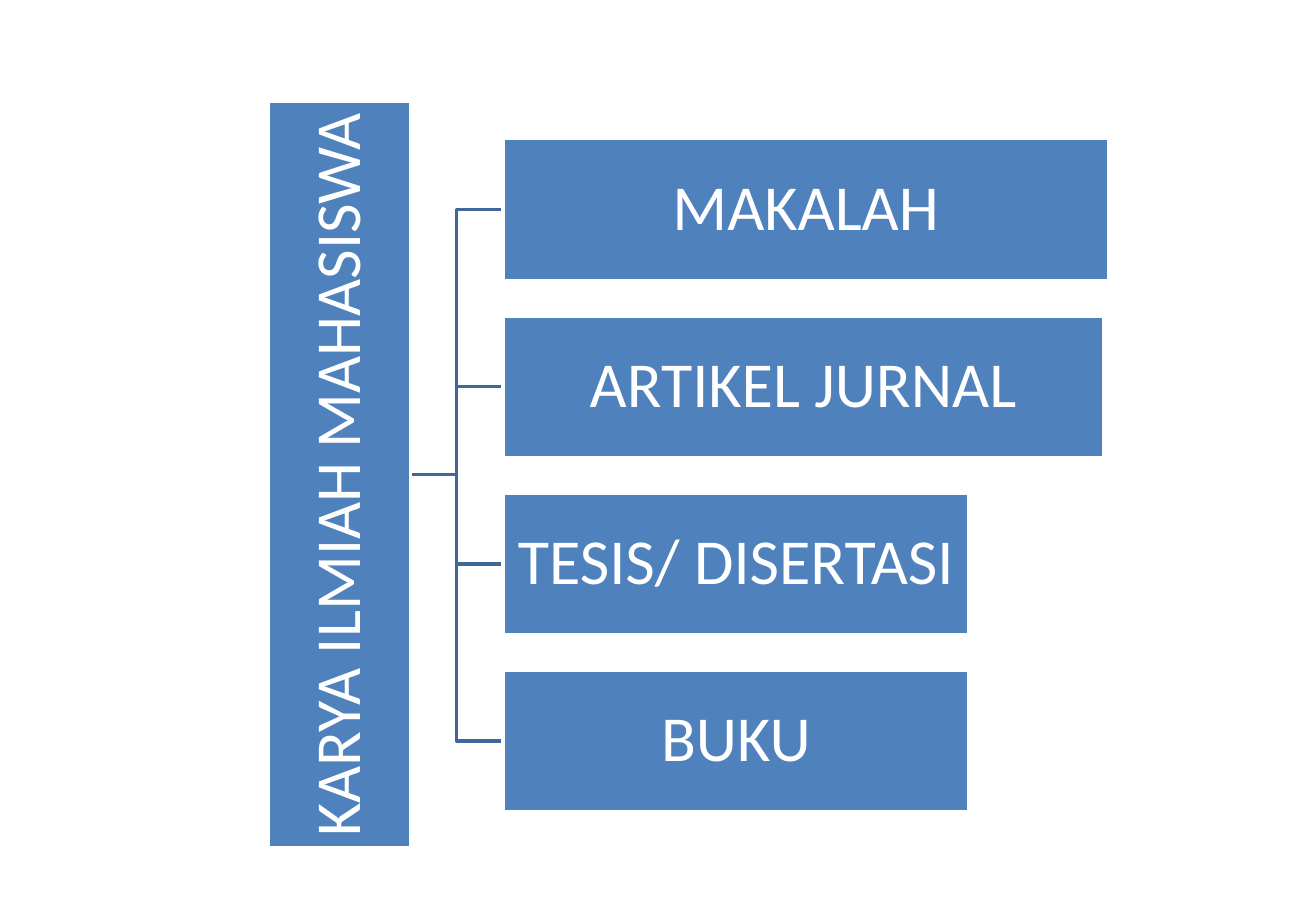
from dataclasses import dataclass

from pptx import Presentation
from pptx.dml.color import RGBColor
from pptx.enum.shapes import MSO_SHAPE
from pptx.enum.text import MSO_ANCHOR, PP_ALIGN
from pptx.shapes.autoshape import Shape
from pptx.slide import Slide
from pptx.util import Emu, Pt

PX = 7620  # EMU per px, 120 px to the inch
COLORS = {"box": "4F81BD", "white": "FFFFFF", "line": "3F6797"}
FRAME_FORMAT = {
    "word_wrap": True,
    "vertical_anchor": MSO_ANCHOR.MIDDLE,
    "margin_left": Pt(2),
    "margin_right": Pt(2),
    "margin_top": Pt(2),
    "margin_bottom": Pt(2),
}
PARAGRAPH_FORMAT = {"alignment": PP_ALIGN.CENTER, "line_spacing": 0.9}
FONT_FORMAT = {"name": "Calibri", "size": Pt(38)}

# Layout in px
THICKNESS = 140
ROOT_LEFT, ROOT_TOP, ROOT_LENGTH = 265, 101, 737
BRANCH_LEFT, BRANCH_TOP, BRANCH_PITCH = 497, 137, 175


@dataclass(frozen=True)
class Box:
    text: str
    left: int
    top: int
    width: int
    height: int = THICKNESS
    rotation: int = 0

    @property
    def middle(self) -> int:
        return self.top + self.height // 2


def px(value: int) -> Emu:
    return Emu(value * PX)


def color(name: str) -> RGBColor:
    return RGBColor.from_string(COLORS[name])


def apply(target: object, values: dict) -> None:
    for name, value in values.items():
        setattr(target, name, value)


def set_outline(sp: Shape, name: str) -> None:
    sp.shadow.inherit = False
    sp.line.color.rgb = color(name)
    sp.line.width = Pt(2)


def draw_box(s: Slide, box: Box) -> None:
    sp = s.shapes.add_shape(
        MSO_SHAPE.RECTANGLE, px(box.left), px(box.top), px(box.width), px(box.height)
    )
    sp.rotation = box.rotation
    sp.fill.solid()
    sp.fill.fore_color.rgb = color("box")
    set_outline(sp, "white")
    tf = sp.text_frame
    apply(tf, FRAME_FORMAT)
    p = tf.paragraphs[0]
    apply(p, PARAGRAPH_FORMAT)
    r = p.add_run()
    r.text = box.text
    apply(r.font, FONT_FORMAT)
    r.font.color.rgb = color("white")


def draw_elbow(s: Slide, x1: int, y1: int, x2: int, y2: int) -> None:
    bend = (x1 + x2) // 2
    builder = s.shapes.build_freeform(x1, y1, scale=PX)
    builder.add_line_segments([(bend, y1), (bend, y2), (x2, y2)], close=False)
    sp = builder.convert_to_shape()
    sp.fill.background()
    set_outline(sp, "line")


def main() -> None:
    prs = Presentation()
    prs.slide_width, prs.slide_height = px(1300), px(900)
    s = prs.slides.add_slide(prs.slide_layouts[6])

    # The root is a wide box turned upright about its centre
    root = Box(
        "KARYA ILMIAH MAHASISWA",
        ROOT_LEFT + THICKNESS // 2 - ROOT_LENGTH // 2,
        ROOT_TOP + ROOT_LENGTH // 2 - THICKNESS // 2,
        ROOT_LENGTH,
        rotation=270,
    )
    widths = {"MAKALAH": 598, "ARTIKEL JURNAL": 593, "TESIS/ DISERTASI": 460, "BUKU": 460}
    branches = [
        Box(text, BRANCH_LEFT, BRANCH_TOP + i * BRANCH_PITCH, width)
        for i, (text, width) in enumerate(widths.items())
    ]

    # Branch lines, behind the boxes
    for branch in reversed(branches):
        draw_elbow(s, ROOT_LEFT + THICKNESS, root.middle, branch.left, branch.middle)

    # Boxes
    for box in [root, *branches]:
        draw_box(s, box)

    prs.save("out.pptx")


if __name__ == "__main__":
    main()
